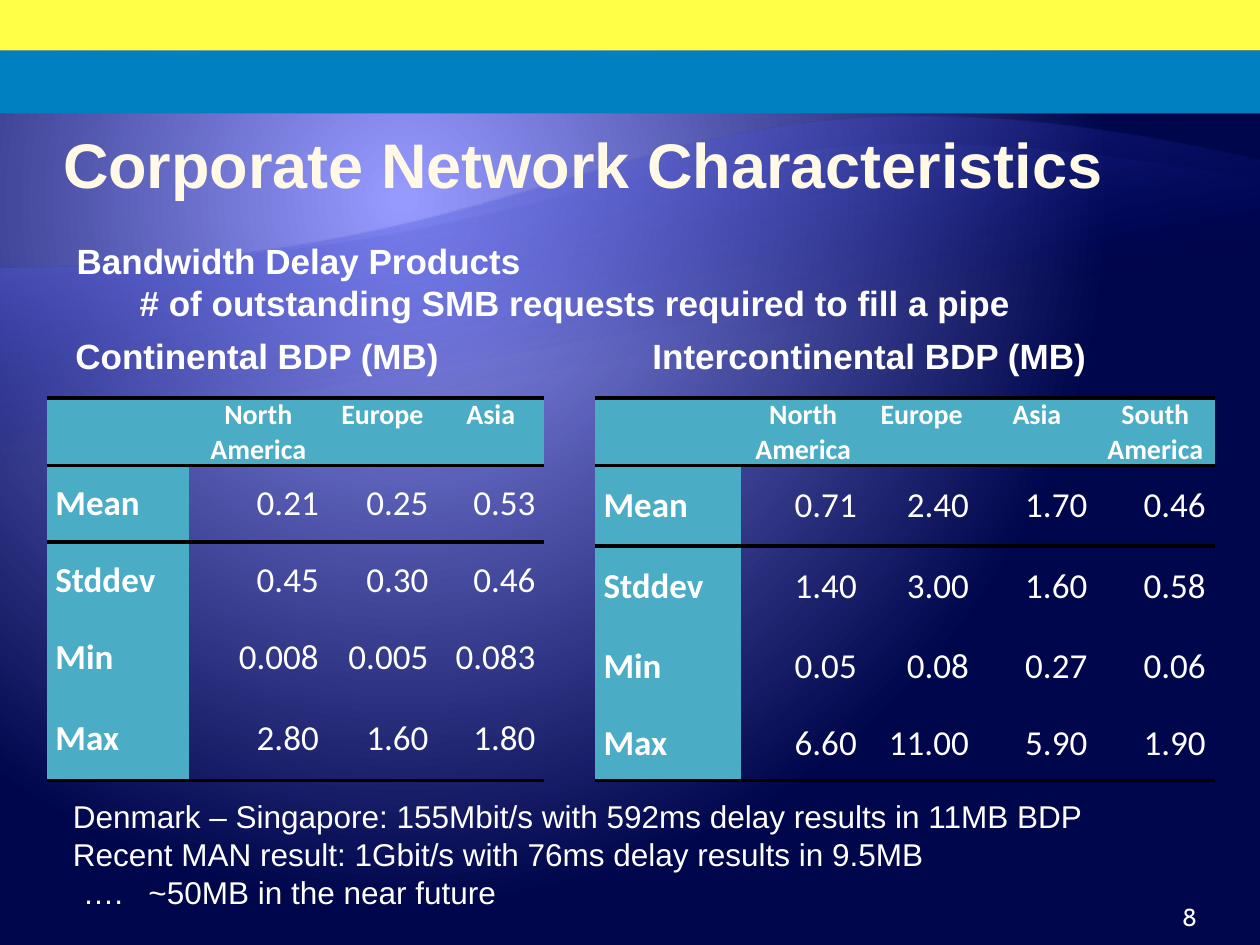
from lxml.etree import SubElement
from pptx import Presentation
from pptx.dml.color import RGBColor
from pptx.enum.shapes import MSO_SHAPE
from pptx.enum.text import MSO_ANCHOR, PP_ALIGN
from pptx.oxml import parse_xml
from pptx.oxml.ns import nsdecls, qn
from pptx.util import Inches, Pt

COLUMNS, ROWS = 100, 75
PLAIN_TABLE = "{2D5ABB26-0587-4C30-8999-92F81FD0307C}"


def color(hex_text):
    return RGBColor.from_string(hex_text)


def gradient_xml(stops, direction):
    """Gradient fill from (position, colour, opacity) stops, all in percent."""
    marks = "".join(
        f'<a:gs pos="{position * 1000}"><a:srgbClr val="{tint}">'
        f'<a:alpha val="{opacity * 1000}"/></a:srgbClr></a:gs>'
        for position, tint, opacity in stops)
    return parse_xml(f'<a:gradFill {nsdecls("a")} rotWithShape="1">'
                     f"<a:gsLst>{marks}</a:gsLst>{direction}</a:gradFill>")


class SlideBuilder:
    WHITE, ACCENT, RULE = "FFFFFF", "4BACC6", "000000"
    TEXT_FONT, TABLE_FONT, NUMBER_FONT = "Arial", "Calibri", "Cabin"

    def __init__(self, deck):
        self.page = deck.slides.add_slide(deck.slide_layouts[5])
        self.unit_x = deck.slide_width / COLUMNS
        self.unit_y = deck.slide_height / ROWS

    def place(self, left, top, width, height):
        """Grid units to slide lengths."""
        return (round(left * self.unit_x), round(top * self.unit_y),
                round(width * self.unit_x), round(height * self.unit_y))

    def style(self, paragraph, size, bold=False, font=TEXT_FONT, tint=WHITE):
        paragraph.font.name = font
        paragraph.font.size = Pt(size)
        paragraph.font.bold = bold
        paragraph.font.color.rgb = color(tint)

    def background(self, stops, center):
        x, y = center
        fill = self.page.background.fill
        fill.gradient()
        old = self.page.background._cSld.find(".//" + qn("a:gradFill"))
        direction = (f'<a:path path="circle"><a:fillToRect l="{x * 1000}" t="{y * 1000}" '
                     f'r="{(100 - x) * 1000}" b="{(100 - y) * 1000}"/></a:path>')
        old.getparent().replace(old, gradient_xml(stops, direction))

    def shape(self, kind, at):
        shape = self.page.shapes.add_shape(kind, *self.place(*at))
        shape.shadow.inherit = False
        shape.line.fill.background()
        return shape

    def band(self, at, tint):
        band = self.shape(MSO_SHAPE.RECTANGLE, at)
        band.fill.solid()
        band.fill.fore_color.rgb = color(tint)

    def wave(self, at, tint, opacity):
        wave = self.shape(MSO_SHAPE.FLOWCHART_DOCUMENT, at)
        wave.rotation = 180
        wave.fill.gradient()
        old = wave._element.spPr.find(qn("a:gradFill"))
        stops = [(65, "000D9E", 0), (100, tint, opacity)]
        old.getparent().replace(old, gradient_xml(stops, '<a:lin ang="4800000" scaled="0"/>'))

    def title(self, text, at):
        title = self.page.shapes.title
        self.page.shapes._spTree.append(title._element)  # in front of the waves
        title.left, title.top, title.width, title.height = self.place(*at)
        frame = title.text_frame
        frame.text = text
        frame.vertical_anchor = MSO_ANCHOR.BOTTOM
        frame.margin_left = frame.margin_right = 0
        frame.margin_top = frame.margin_bottom = Inches(0.01)
        frame.paragraphs[0].alignment = PP_ALIGN.LEFT
        self.style(frame.paragraphs[0], 36, True, tint="FFF9E5")

    def text(self, lines, at, size, bold=False, anchor=MSO_ANCHOR.TOP,
             align=PP_ALIGN.LEFT, font=TEXT_FONT):
        """Text box; each line is (text, left indent, first-line indent) in inches."""
        box = self.page.shapes.add_textbox(*self.place(*at))
        frame = box.text_frame
        frame.word_wrap = True
        frame.vertical_anchor = anchor
        for number, (text, indent, first) in enumerate(lines):
            para = frame.add_paragraph() if number else frame.paragraphs[0]
            para.text = text
            para.alignment = align
            properties = para._p.get_or_add_pPr()
            properties.set("marL", str(Inches(indent)))
            properties.set("indent", str(Inches(first)))
            self.style(para, size, bold, font)
        return frame

    def rule(self, cell, edges):
        """Draw the given cell edges (T or B) as heavy lines."""
        properties = cell._tc.get_or_add_tcPr()
        for index, edge in enumerate(edges):
            line = properties.makeelement(qn(f"a:ln{edge}"), {"w": str(Pt(2.25))})
            fill = SubElement(line, qn("a:solidFill"))
            SubElement(fill, qn("a:srgbClr"), val=self.RULE)
            properties.insert(index, line)

    def table(self, records, corner, widths, heights):
        at = self.place(*corner, sum(widths), sum(heights))
        table = self.page.shapes.add_table(len(heights), len(widths), *at).table
        table.first_row = table.horz_banding = False
        table._tbl.tblPr.find(qn("a:tableStyleId")).text = PLAIN_TABLE
        for column, width in zip(table.columns, widths):
            column.width = round(width * self.unit_x)
        for row, height in zip(table.rows, heights):
            row.height = round(height * self.unit_y)
        edges = {0: "TB", 1: "T", len(heights) - 1: "B"}
        for r, record in enumerate(records):
            for c, text in enumerate(record):
                self.cell(table.cell(r, c), text, r == 0, c == 0)
                self.rule(table.cell(r, c), edges.get(r, ""))

    def cell(self, cell, text, header, label):
        cell.margin_left = cell.margin_right = Inches(0.07)
        cell.margin_top = cell.margin_bottom = 0
        cell.text = text
        para = cell.text_frame.paragraphs[0]
        if header:
            para.alignment = PP_ALIGN.CENTER
        else:
            cell.vertical_anchor = MSO_ANCHOR.MIDDLE
            para.alignment = PP_ALIGN.LEFT if label else PP_ALIGN.RIGHT
            para.space_after = Pt(10)
        self.style(para, 16 if header else 20, header or label, self.TABLE_FONT)
        if header or label:
            cell.fill.solid()
            cell.fill.fore_color.rgb = color(self.ACCENT)
        else:
            cell.fill.background()


def main():
    deck = Presentation()
    deck.slide_width, deck.slide_height = Inches(10), Inches(7.5)
    slide = SlideBuilder(deck)

    slide.background([(0, "969AFF", 100), (1, "969AFF", 100), (90, "00064B", 100)], (32, 21))
    slide.wave((0, 8.4, 100, 64.9), "797FFF", 55)
    slide.wave((0, 10.8, 100, 52.8), "A3A7FF", 30)
    slide.band((0, 4, 100, 5), "0080C0")
    slide.band((0, 0, 100, 4), "FFFF48")
    slide.title("Corporate Network Characteristics", (5, 9.1, 90, 7))

    for heading, left in (("Continental BDP (MB)", 5), ("Intercontinental BDP (MB)", 50.8)):
        slide.text([(heading, 0.35, -0.35)], (left, 24.9, 44.2, 5.5), 20, True, MSO_ANCHOR.BOTTOM)
    number = slide.text([("8", 0, 0)], (89.2, 70.4, 5.8, 4), 14, anchor=MSO_ANCHOR.BOTTOM,
                        align=PP_ALIGN.RIGHT, font=slide.NUMBER_FONT)
    number.margin_right = 0
    slide.text([("Bandwidth Delay Products", 0, 0),
                ("# of outstanding SMB requests required to fill a pipe", 0.5, 0)],
               (5.1, 18.5, 94.1, 7.7), 20, True)

    slide.table([("", "North America", "Europe", "Asia"),
                 ("Mean", "0.21", "0.25", "0.53"),
                 ("Stddev", "0.45", "0.30", "0.46"),
                 ("Min", "0.008", "0.005", "0.083"),
                 ("Max", "2.80", "1.60", "1.80")],
                (3.7, 31.6), (11.3, 11, 8.7, 8.5), (5.2, 6.1, 6.1, 6.1, 6.7))
    slide.table([("", "North America", "Europe", "Asia", "South America"),
                 ("Mean", "0.71", "2.40", "1.70", "0.46"),
                 ("Stddev", "1.40", "3.00", "1.60", "0.58"),
                 ("Min", "0.05", "0.08", "0.27", "0.06"),
                 ("Max", "6.60", "11.00", "5.90", "1.90")],
                (47.2, 31.6), (11.6, 9.9, 8.9, 9.4, 9.4), (4.7, 6.4, 6.4, 6.4, 5.8))

    slide.text([("Denmark – Singapore: 155Mbit/s with 592ms delay results in 11MB BDP", 0, 0),
                ("Recent MAN result: 1Gbit/s with 76ms delay results in 9.5MB", 0, 0),
                ("….\t~50MB in the near future", 0.6, -0.52)],
               (4.8, 62.8, 88.2, 10.1), 18)
    deck.save("out.pptx")


if __name__ == "__main__":
    main()
